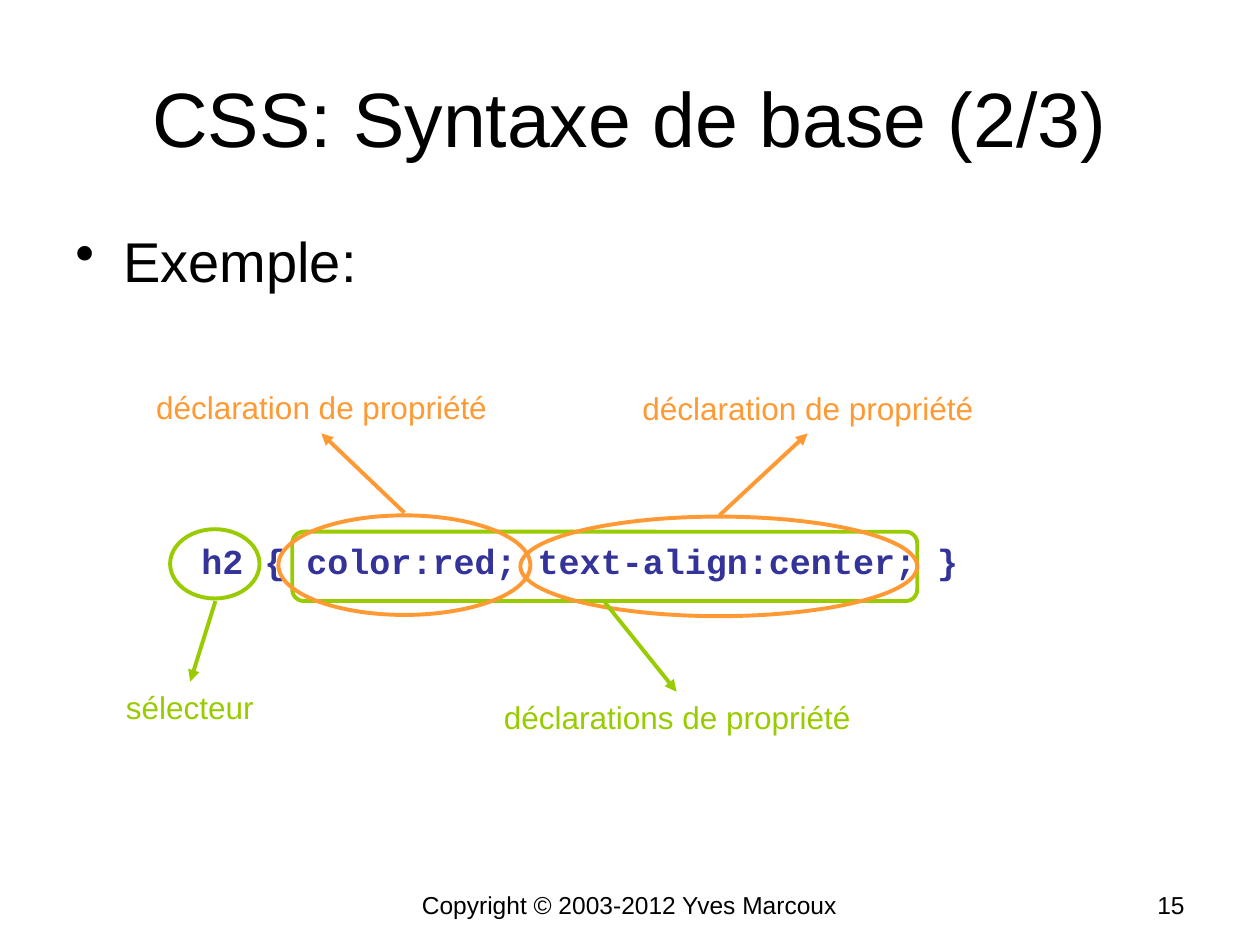
"""Build the slide on basic CSS syntax, with its annotated example rule."""
from lxml import etree
from pptx import Presentation
from pptx.dml.color import RGBColor
from pptx.enum.shapes import MSO_CONNECTOR, MSO_SHAPE
from pptx.enum.text import MSO_ANCHOR, PP_ALIGN
from pptx.oxml.ns import qn
from pptx.util import Inches, Pt

BLACK = RGBColor(0x00, 0x00, 0x00)
BLUE = RGBColor(0x33, 0x33, 0x99)
GREEN = RGBColor(0x99, 0xCC, 0x00)
ORANGE = RGBColor(0xFF, 0x99, 0x33)

ELLIPSE = MSO_SHAPE.OVAL
ROUNDED = MSO_SHAPE.ROUNDED_RECTANGLE
STRAIGHT = MSO_CONNECTOR.STRAIGHT
TOP, MIDDLE, BOTTOM = MSO_ANCHOR.TOP, MSO_ANCHOR.MIDDLE, MSO_ANCHOR.BOTTOM
LEFT, CENTER, RIGHT = PP_ALIGN.LEFT, PP_ALIGN.CENTER, PP_ALIGN.RIGHT

LINE_WIDTH = Pt(2.25)

OUTLINES = [
    (ELLIPSE, (1.35, 4.2, 0.71, 0.55), GREEN),
    (ROUNDED, (2.32, 4.22, 4.96, 0.55), GREEN),
    (ELLIPSE, (2.21, 4.09, 2, 0.79), ORANGE),
    (ELLIPSE, (4.13, 4.1, 3.15, 0.79), ORANGE),
]
LABELS = [
    ("sélecteur", (0.9, 5.41, 1.22, 0.4), GREEN),
    ("déclarations de propriété", (3.9, 5.49, 2.95, 0.4), GREEN),
    ("déclaration de propriété", (1.14, 3.03, 2.83, 0.4), ORANGE),
    ("déclaration de propriété", (5, 3.04, 2.83, 0.4), ORANGE),
]
ARROWS = [
    ((1.71, 4.77), (1.51, 5.41), GREEN),
    ((4.8, 4.78), (5.37, 5.49), GREEN),
    ((3.21, 4.07), (2.55, 3.44), ORANGE),
    ((5.71, 4.09), (6.41, 3.44), ORANGE),
]


def add_text(page, text, area, size, color=BLACK, font="Arial", bold=False,
             align=LEFT, anchor=TOP, wrap=True):
    """Add a one-paragraph text box and return its paragraph."""
    box = page.shapes.add_textbox(*map(Inches, area))
    frame = box.text_frame
    frame.text = text
    frame.word_wrap = wrap
    frame.vertical_anchor = anchor
    para = frame.paragraphs[0]
    para.alignment = align
    span = para.runs[0]
    span.font.name = font
    span.font.size = Pt(size)
    span.font.bold = bold
    span.font.color.rgb = color
    return para


def add_bullet(para, indent):
    """Give a paragraph a round bullet with a hanging indent."""
    properties = para._p.get_or_add_pPr()
    properties.set("marL", str(Inches(indent)))
    properties.set("indent", str(-Inches(indent)))
    etree.SubElement(properties, qn("a:buChar")).set("char", "•")


def add_outline(page, kind, area, color):
    """Add an unfilled shape that rings a part of the rule."""
    shape = page.shapes.add_shape(kind, *map(Inches, area))
    shape.shadow.inherit = False
    shape.fill.background()
    shape.line.color.rgb = color
    shape.line.width = LINE_WIDTH


def add_arrow(page, start, end, color):
    """Add a straight arrow from a ringed part to its label."""
    arrow = page.shapes.add_connector(STRAIGHT, *map(Inches, start + end))
    arrow.line.color.rgb = color
    arrow.line.width = LINE_WIDTH
    line = arrow.line._get_or_add_ln()
    etree.SubElement(line, qn("a:tailEnd")).set("type", "triangle")
    etree.SubElement(arrow._element.spPr, qn("a:effectLst"))


def main():
    """Build the page and save the deck."""
    deck = Presentation()
    deck.slide_width, deck.slide_height = Inches(10), Inches(7.5)
    page = deck.slides.add_slide(deck.slide_layouts[6])

    add_text(page, "Copyright © 2003-2012 Yves Marcoux", (2.87, 6.83, 4.25, 0.52),
             14, align=CENTER, anchor=BOTTOM)
    add_text(page, "15", (7.17, 6.83, 2.33, 0.52), 14, align=RIGHT, anchor=BOTTOM)
    add_text(page, "CSS: Syntaxe de base (2/3)", (0.5, 0.3, 9, 1.25), 44,
             align=CENTER, anchor=MIDDLE)
    example = add_text(page, "Exemple:", (0.5, 1.75, 9, 0.7), 32)
    example.space_before = Pt(4)
    add_bullet(example, 0.38)
    add_text(page, "h2 { color:red; text-align:center; }", (1.5, 4.2, 8, 0.5), 20,
             BLUE, font="Courier New", bold=True, anchor=MIDDLE)

    for kind, area, color in OUTLINES:
        add_outline(page, kind, area, color)
    for text, area, color in LABELS:
        add_text(page, text, area, 18, color, wrap=False)
    for start, end, color in ARROWS:
        add_arrow(page, start, end, color)

    deck.save("out.pptx")


if __name__ == "__main__":
    main()
